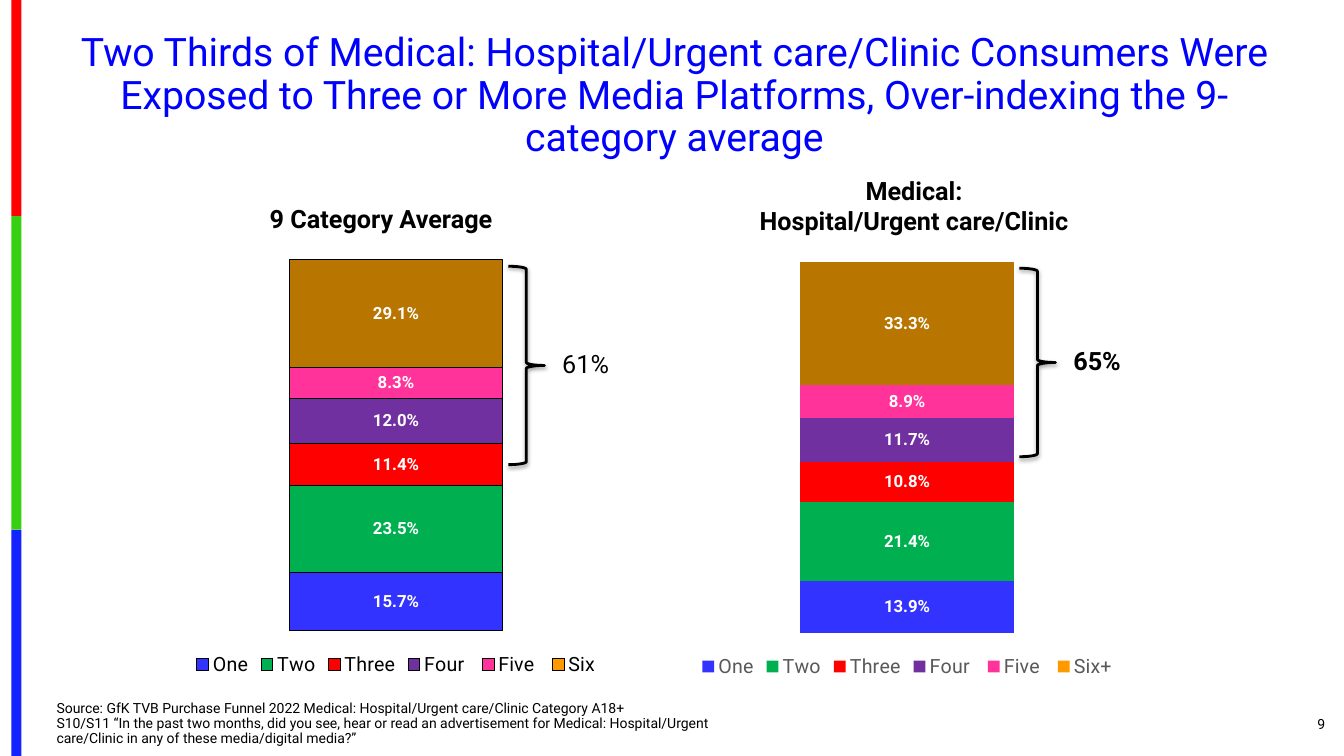
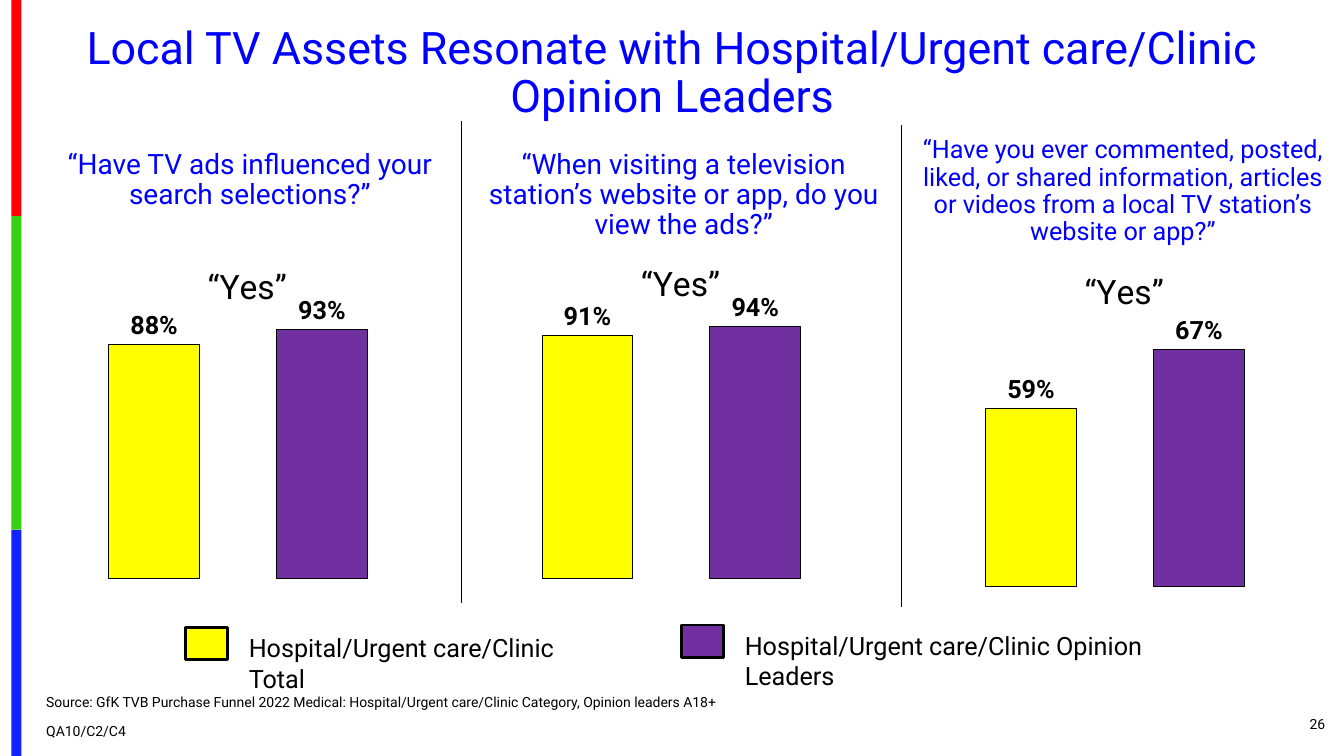
import pptx
import pptx.chart.data
import pptx.dml.color
import pptx.enum.chart
import pptx.enum.shapes
import pptx.enum.text
import pptx.oxml
import pptx.oxml.ns
import pptx.util

FONT = "Roboto"
COLORS = {
    "red_band": "FE0000", "green_band": "36CF12", "blue_band": "1322FE",
    "title": "0000FF", "text": "000000", "white": "FFFFFF", "gray": "595959",
    "one": "3333FF", "two": "00B050", "three": "FF0000", "four": "7030A0",
    "five": "FF3399", "six": "FF9900", "six_bar": "B87600",
    "total": "FFFF00", "leaders": "7030A0",
}
PLATFORMS = [("One", "one"), ("Two", "two"), ("Three", "three"),
             ("Four ", "four"), ("Five ", "five")]
SHAPE = pptx.enum.shapes.MSO_SHAPE
ALIGN = pptx.enum.text.PP_ALIGN
ANCHOR = pptx.enum.text.MSO_ANCHOR
CHART = pptx.enum.chart.XL_CHART_TYPE
LABEL = pptx.enum.chart.XL_LABEL_POSITION


# Shared helpers
def cm(*values):
    return [pptx.util.Cm(v) for v in values]


def rgb(key):
    return pptx.dml.color.RGBColor.from_string(COLORS[key])


def style(font, size, color="text", bold=False):
    fmt = {"name": FONT, "size": pptx.util.Pt(size), "bold": bold}
    for key, value in fmt.items():
        setattr(font, key, value)
    font.color.rgb = rgb(color)


def paint(part, fill, line=None, width=0.75):
    if fill:
        part.fill.solid()
        part.fill.fore_color.rgb = rgb(fill)
    else:
        part.fill.background()
    if line:
        part.line.color.rgb = rgb(line)
        part.line.width = pptx.util.Pt(width)
    else:
        part.line.fill.background()


def write(sp, lines, size, color="text", bold=False, align=ALIGN.LEFT,
          anchor=ANCHOR.TOP, spacing=1.0, gap=0):
    tf = sp.text_frame
    frame = {"word_wrap": True, "vertical_anchor": anchor,
             "auto_size": pptx.enum.text.MSO_AUTO_SIZE.NONE}
    for key, value in frame.items():
        setattr(tf, key, value)
    for i, line in enumerate(lines):
        p = tf.add_paragraph() if i else tf.paragraphs[0]
        para = {"alignment": align, "line_spacing": spacing,
                "space_before": pptx.util.Pt(gap if i else 0)}
        for key, value in para.items():
            setattr(p, key, value)
        r = p.add_run()
        r.text = line
        style(r.font, size, color, bold)


def add_text(s, box, lines, size, **fmt):
    write(s.shapes.add_textbox(*cm(*box)), lines, size, **fmt)


def add_shape(s, kind, box, fill, line=None, width=0.75):
    sp = s.shapes.add_shape(kind, *cm(*box))
    sp.shadow.inherit = False
    paint(sp, fill, line, width)
    return sp


def move(sp, box):
    for key, value in zip(("left", "top", "width", "height"), cm(*box)):
        setattr(sp, key, value)


# Colour bands at the left edge, kept on the slide master
def add_bands(prs, s):
    top = 0
    for color, height in (("red_band", 5.45), ("green_band", 7.9), ("blue_band", 5.7)):
        sp = add_shape(s, SHAPE.RECTANGLE, (0.29, top, 0.25, height), color)
        prs.slide_master.shapes.element.append(sp.element)
        top += height


# Title, source note and page number
def add_frame(s, title, title_box, size, source, source_box, gap, number):
    move(s.shapes.title, title_box)
    write(s.shapes.title, [title], size, color="title", align=ALIGN.CENTER,
          anchor=ANCHOR.MIDDLE, spacing=0.9)
    body = s.placeholders[1]
    move(body, source_box)
    for i in range(len(source)):
        p = body.text_frame.add_paragraph() if i else body.text_frame.paragraphs[0]
    for p in body.text_frame.paragraphs[1:]:
        p._p.getparent().remove(p._p)
    write(body, source, 10, anchor=ANCHOR.BOTTOM, spacing=0.9, gap=gap)
    for p in body.text_frame.paragraphs:
        pPr = p._p.get_or_add_pPr()
        pPr.set("marL", "0")
        pPr.set("indent", "0")
        pPr.append(pptx.oxml.parse_xml(
            "<a:buNone %s/>" % pptx.oxml.ns.nsdecls("a")))
    add_text(s, (30.91, 17.73, 2.74, 1.02), [number], 10, align=ALIGN.RIGHT,
             anchor=ANCHOR.MIDDLE)


# Charts
def add_chart(s, kind, box, categories, series, top, bottom, gap):
    data = pptx.chart.data.CategoryChartData()
    data.categories = categories
    for name, values in series:
        data.add_series(name, values)
    chart = s.shapes.add_chart(kind, *cm(*box), data).chart
    style(chart.font, 10)
    chart.has_title = chart.has_legend = False
    chart.category_axis.visible = False
    axis = {"visible": False, "has_major_gridlines": False,
            "minimum_scale": bottom, "maximum_scale": top}
    for key, value in axis.items():
        setattr(chart.value_axis, key, value)
    plot = chart.plots[0]
    plot.gap_width = gap
    plot.vary_by_categories = False
    plot.has_data_labels = True
    return chart


def label_bars(chart, number_format, position, *font):
    labels = chart.plots[0].data_labels
    fmt = {"show_value": True, "number_format": number_format,
           "number_format_is_linked": False, "position": position}
    for key, value in fmt.items():
        setattr(labels, key, value)
    style(labels.font, *font)


def set_layout(parent, index, target="", **sizes):
    for old in parent.findall(pptx.oxml.ns.qn("c:layout")):
        parent.remove(old)
    inner = '<c:layoutTarget val="%s"/>' % target if target else ""
    inner += '<c:xMode val="edge"/><c:yMode val="edge"/>'
    inner += "".join('<c:%s val="%s"/>' % item for item in sizes.items())
    parent.insert(index, pptx.oxml.parse_xml(
        "<c:layout %s><c:manualLayout>%s</c:manualLayout></c:layout>"
        % (pptx.oxml.ns.nsdecls("c"), inner)))


# Stacked column with heading, brace and share of three or more
def add_stack(s, box, heading, heading_x, values, last, legend_color, line,
              brace_height, share, bold):
    x, y = box[:2]
    platforms = PLATFORMS + [(last, "six")]
    series = [(name, [v]) for (name, _), v in zip(platforms, values)]
    chart = add_chart(s, CHART.COLUMN_STACKED, box, ["1"], series, 1.2, 0, 150)
    chart.plots[0].overlap = 100
    label_bars(chart, "0.0%", LABEL.CENTER, 12, "white", True)
    for ser, (_, color) in zip(chart.plots[0].series, platforms):
        paint(ser.format, color, line)
    paint(chart.plots[0].series[-1].points[0].format, "six_bar", line)
    chart.has_legend = True
    chart.legend.position = pptx.enum.chart.XL_LEGEND_POSITION.BOTTOM
    chart.legend.include_in_layout = False
    style(chart.legend.font, 14, legend_color)

    add_text(s, (x + heading_x, y - 0.2, 9.45, 1.8), heading, 18, bold=True,
             align=ALIGN.CENTER, anchor=ANCHOR.BOTTOM)
    brace = add_shape(s, SHAPE.RIGHT_BRACE, (x + 9.84, y + 2.29, 0.91, brace_height),
                      None, "text", 2)
    effects = brace.element.spPr.find(pptx.oxml.ns.qn("a:effectLst"))
    effects.append(pptx.oxml.parse_xml(
        '<a:outerShdw %s blurRad="39400" dist="20300" dir="5400000" rotWithShape="0">'
        '<a:srgbClr val="%s"><a:alpha val="38000"/></a:srgbClr></a:outerShdw>'
        % (pptx.oxml.ns.nsdecls("a"), COLORS["text"])))
    add_text(s, (x + 10.95, y + 1.74 + brace_height / 2, 2.29, 1.02), [share], 18,
             bold=bold)


# Question with its pair of "Yes" columns
def add_question(s, box, text, size, offset, width, values, bottom, top,
                 plot_y, title_y):
    x, y = box[:2]
    chart = add_chart(s, CHART.COLUMN_CLUSTERED, box, ["1", "2"],
                      [("Series 1", values)], top, bottom, 85)
    label_bars(chart, "0%", LABEL.OUTSIDE_END, 18, "text", True)
    ser = chart.plots[0].series[0]
    paint(ser.format, "one", "text")
    for i, color in enumerate(("total", "leaders")):
        paint(ser.points[i].format, color, "text")
    chart.has_title = True
    r = chart.chart_title.text_frame.paragraphs[0].add_run()
    r.text = "“Yes”"
    style(r.font, 24)
    set_layout(chart.chart_title.element, 1, x=0.4, y=title_y)
    plot_area = chart.element.find(".//" + pptx.oxml.ns.qn("c:plotArea"))
    set_layout(plot_area, 0, "inner", x=0.04, y=plot_y, w=0.92,
               h=round(0.94 - plot_y, 2))
    add_text(s, (x + offset[0], y + offset[1], width, 2.6), [text], size,
             color="title", align=ALIGN.CENTER, spacing=0.9)


def add_divider(s, x, top, height):
    line = s.shapes.add_connector(pptx.enum.shapes.MSO_CONNECTOR.STRAIGHT,
                                  *cm(x, top, x, top + height))
    line.line.color.rgb = rgb("text")
    line.line.width = pptx.util.Pt(0.75)
    line.element.spPr.append(pptx.oxml.parse_xml(
        "<a:effectLst %s/>" % pptx.oxml.ns.nsdecls("a")))


def add_key(s, x, y, color, text, width):
    add_shape(s, SHAPE.RECTANGLE, (x, y, 1.07, 0.81), color, "text", 2)
    add_text(s, (x + 1.35, y, width, 1.02), [text], 18)


def build_platforms(s):
    add_frame(
        s, "Two Thirds of Medical: Hospital/Urgent care/Clinic Consumers Were Exposed "
        "to Three or More Media Platforms, Over-indexing the 9- category average",
        (1.22, 0.69, 31.55, 3.48), 28,
        ["Source: GfK TVB Purchase Funnel 2022 Medical: Hospital/Urgent care/Clinic "
         "Category A18+",
         "S10/S11 “In the past two months, did you see, hear or read an advertisement for "
         "Medical: Hospital/Urgent care/Clinic in any of these media/digital media?”"],
        (1.17, 17.53, 17.17, 1.42), 0, "9")
    add_stack(s, (2.97, 4.42, 14.02, 12.73), ["9 Category Average"], 1.91,
              [0.157, 0.235, 0.114, 0.12, 0.083, 0.291], "Six", "text", "text",
              5, "61%", False)
    add_stack(s, (15.85, 4.47, 14.02, 12.73), ["Medical:", "Hospital/Urgent care/Clinic"],
              2.46, [0.139, 0.214, 0.108, 0.117, 0.089, 0.333], "Six+", "gray", None,
              4.75, "65%", True)


def build_assets(s):
    add_frame(
        s, "Local TV Assets Resonate with Hospital/Urgent care/Clinic Opinion Leaders",
        (1.17, 0.51, 31.55, 2.72), 32,
        ["Source: GfK TVB Purchase Funnel 2022 Medical: Hospital/Urgent care/Clinic "
         "Category, Opinion leaders A18+", "QA10/C2/C4"],
        (0.91, 17.4, 27.38, 1.37), 10, "26")
    add_question(s, (1.4, 6.05, 9.2, 9.07),
                 "“Have TV ads influenced your search selections?”", 20,
                 (-0.08, -2.39), 9.96, [0.88, 0.93], 0.1, 1, 0.19, 0.05)
    add_question(s, (12.32, 6.05, 9.2, 9.07),
                 "“When visiting a television station’s website or app, do you view the "
                 "ads?”", 20, (-0.33, -2.39), 10.49, [0.91, 0.94], 0.1, 1, 0.19, 0.04)
    add_question(s, (23.5, 6.25, 9.2, 9.07),
                 "“Have you ever commented, posted, liked, or shared information, articles "
                 "or videos from a local TV station’s website or app?”", 18,
                 (-0.79, -2.92), 11.18, [0.59, 0.67], 0.35, 0.7, 0.22, 0.04)
    add_divider(s, 11.63, 3.05, 12.14)
    add_divider(s, 22.71, 3.15, 12.14)
    add_key(s, 4.67, 15.82, "total", "Hospital/Urgent care/Clinic Total", 9.6)
    add_key(s, 17.17, 15.75, "leaders", "Hospital/Urgent care/Clinic Opinion Leaders", 12.83)


def main():
    prs = pptx.Presentation()
    prs.slide_width, prs.slide_height = cm(33.87, 19.05)
    slides = [prs.slides.add_slide(prs.slide_layouts[1]) for _ in range(2)]
    add_bands(prs, slides[0])
    for build, s in zip((build_platforms, build_assets), slides):
        build(s)
    prs.save("out.pptx")


if __name__ == "__main__":
    main()
